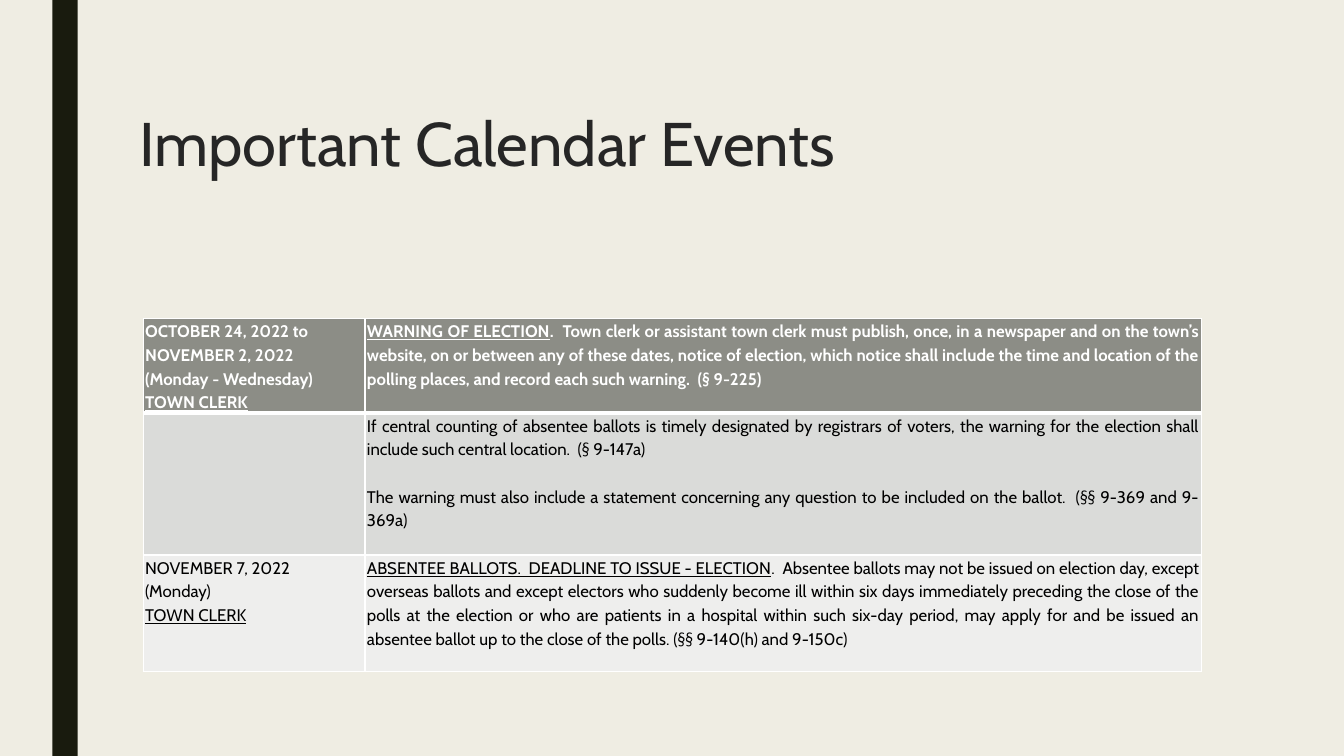
"""Build the Important Calendar Events slide with its table of election deadlines."""
from dataclasses import dataclass

from lxml.etree import SubElement
from pptx import Presentation
from pptx.dml.color import RGBColor as RGB
from pptx.enum.shapes import MSO_SHAPE as SHAPE
from pptx.enum.text import MSO_ANCHOR as ANCHOR, PP_ALIGN as ALIGN
from pptx.oxml.ns import qn
from pptx.slide import Slide
from pptx.table import _Cell as Cell
from pptx.util import Inches, Pt


@dataclass(frozen=True)
class Theme:
    font: str = "Cabin"
    title_size: int = 44
    body_size: int = 12
    background: str = "EFEDE3"
    bar: str = "191B0E"
    title: str = "262626"
    text: str = "000000"
    light: str = "FFFFFF"
    header: str = "8C8D86"
    band_dark: str = "DADBD9"
    band_light: str = "EEEEED"
    line: float = 1
    header_line: float = 3


@dataclass(frozen=True)
class Run:
    text: str
    underline: bool = False


Paragraphs = list[list[Run]]


@dataclass(frozen=True)
class Event:
    height: float
    fill: str
    when: Paragraphs
    duty: Paragraphs
    header: bool = False
    top: float = 1
    bottom: float = 1


THEME = Theme()
COLUMNS = (2.2, 8.3)
EVENTS = [
    Event(
        0.93, THEME.header,
        [[Run("OCTOBER 24, 2022 to")], [Run("NOVEMBER 2, 2022")],
         [Run("(Monday - Wednesday)")], [Run("TOWN CLERK", True)]],
        [[Run("WARNING OF ELECTION", True),
          Run(".  Town clerk or assistant town clerk must publish, once, in a newspaper "
              "and on the town’s website, on or between any of these dates, notice of "
              "election, which notice shall include the time and location of the polling "
              "places, and record each such warning.  (§ 9-225)")]],
        header=True, bottom=THEME.header_line,
    ),
    Event(
        1.41, THEME.band_dark, [],
        [[Run("If central counting of absentee ballots is timely designated by registrars "
              "of voters, the warning for the election shall include such central "
              "location.  (§ 9-147a)")],
         [Run("The warning must also include a statement concerning any question to be "
              "included on the ballot.  (§§ 9-369 and 9-369a)")]],
        top=THEME.header_line,
    ),
    Event(
        1.16, THEME.band_light,
        [[Run("NOVEMBER 7, 2022")], [Run("(Monday)")], [Run("TOWN CLERK", True)]],
        [[Run("ABSENTEE BALLOTS.  DEADLINE TO ISSUE - ELECTION", True),
          Run(".  Absentee ballots may not be issued on election day, except overseas "
              "ballots and except electors who suddenly become ill within six days "
              "immediately preceding the close of the polls at the election or who are "
              "patients in a hospital within such six-day period, may apply for and be "
              "issued an absentee ballot up to the close of the polls. (§§ 9-140(h) and "
              "9-150c)")]],
    ),
]


def add_bar(s: Slide) -> None:
    sp = s.shapes.add_shape(SHAPE.RECTANGLE, Inches(0.52), 0, Inches(0.25), Inches(7.5))
    sp.shadow.inherit = False
    sp.fill.solid()
    sp.fill.fore_color.rgb = RGB.from_string(THEME.bar)
    sp.line.fill.background()


def set_title(s: Slide, text: str) -> None:
    sp = s.shapes.title
    sp.left, sp.top = Inches(1.28), Inches(1.08)
    sp.width, sp.height = Inches(10.5), Inches(1.43)
    tf = sp.text_frame
    tf.text = text
    tf.vertical_anchor = ANCHOR.TOP
    p = tf.paragraphs[0]
    p.alignment = ALIGN.LEFT
    p.line_spacing = 0.89
    p.font.name = THEME.font
    p.font.size = Pt(THEME.title_size)
    p.font.color.rgb = RGB.from_string(THEME.title)


def set_borders(cell: Cell, top: float, bottom: float) -> None:
    widths = {"a:lnL": THEME.line, "a:lnR": THEME.line, "a:lnT": top, "a:lnB": bottom}
    tc_pr = cell._tc.get_or_add_tcPr()
    for tag, width in widths.items():
        ln = SubElement(tc_pr, qn(tag), w=str(Pt(width)))
        SubElement(SubElement(ln, qn("a:solidFill")), qn("a:srgbClr"), val=THEME.light)


def fill_cell(cell: Cell, event: Event, paragraphs: Paragraphs,
              align: ALIGN, gap: float) -> None:
    cell.margin_left = cell.margin_right = Inches(0.02)
    cell.margin_top = cell.margin_bottom = 0
    cell.vertical_anchor = ANCHOR.TOP
    set_borders(cell, event.top, event.bottom)
    cell.fill.solid()
    cell.fill.fore_color.rgb = RGB.from_string(event.fill)
    tf = cell.text_frame
    for i, runs in enumerate(paragraphs):
        p = tf.add_paragraph() if i else tf.paragraphs[0]
        p.alignment = align
        p.line_spacing = 1.15
        p.space_before = Pt(gap if i else 0)
        p.font.name = THEME.font
        p.font.size = Pt(THEME.body_size)
        p.font.bold = event.header
        p.font.color.rgb = RGB.from_string(THEME.light if event.header else THEME.text)
        for run in runs:
            r = p.add_run()
            r.text = run.text
            r.font.underline = run.underline


def add_events(s: Slide, events: list[Event]) -> None:
    frame = s.shapes.add_table(
        len(events), len(COLUMNS), Inches(1.42), Inches(3.16),
        Inches(sum(COLUMNS)), Inches(sum(event.height for event in events)))
    table = frame.table
    table.first_row = table.horz_banding = False
    for column, width in zip(table.columns, COLUMNS):
        column.width = Inches(width)
    for row, event in zip(table.rows, events):
        row.height = Inches(event.height)
        when, duty = row.cells
        fill_cell(when, event, event.when, ALIGN.LEFT, 0)
        fill_cell(duty, event, event.duty, ALIGN.JUSTIFY, 17)


def main() -> None:
    prs = Presentation()
    prs.slide_width, prs.slide_height = Inches(13.33), Inches(7.5)
    s = prs.slides.add_slide(prs.slide_layouts[5])
    s.background.fill.solid()
    s.background.fill.fore_color.rgb = RGB.from_string(THEME.background)
    add_bar(s)
    set_title(s, "Important Calendar Events")
    add_events(s, EVENTS)
    prs.save("out.pptx")


if __name__ == "__main__":
    main()
